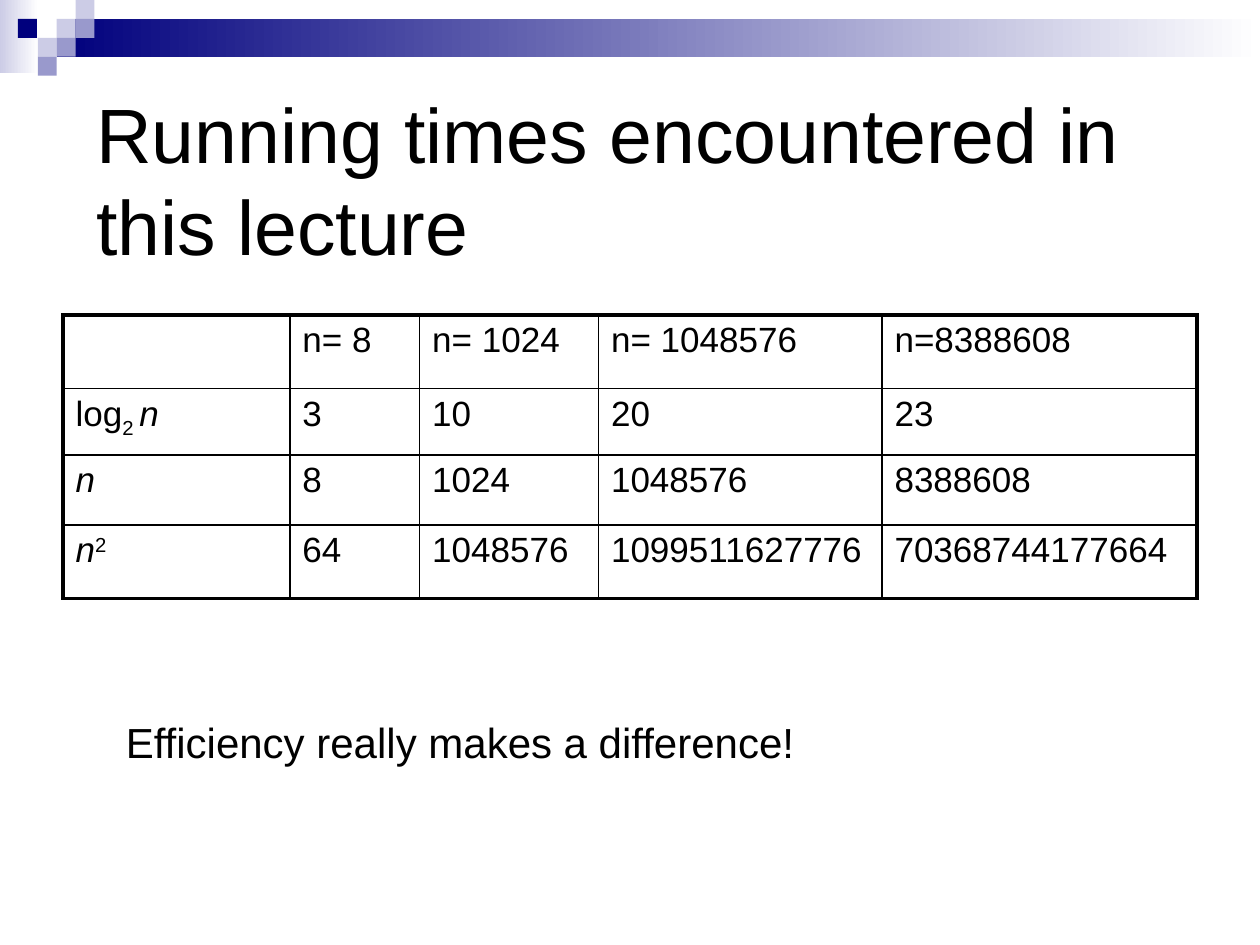
import pptx
import pptx.util
import pptx.dml.color
import pptx.enum.shapes
import pptx.enum.text
import pptx.oxml
import pptx.oxml.ns

Pt = pptx.util.Pt
COLORS = {
    "ink": "000000",
    "navy": "00007D",
    "periwinkle": "9999CC",
    "lavender": "CCCCE6",
    "paper": "FFFFFF",
}


def rgb(color):
    return pptx.dml.color.RGBColor.from_string(COLORS[color])


class SlideBuilder:
    font = "Arial"
    thin = 1
    thick = 2.25

    def __init__(self, slide):
        self.slide = slide

    def block(self, left, top, width, height, color, fade_to=None):
        block = self.slide.shapes.add_shape(
            pptx.enum.shapes.MSO_SHAPE.RECTANGLE,
            Pt(left), Pt(top), Pt(width), Pt(height))
        block.shadow.inherit = False
        block.line.fill.background()
        if fade_to:
            block.fill.gradient()
            block.fill.gradient_angle = 0
            for stop, shade in zip(block.fill.gradient_stops, (color, fade_to)):
                stop.color.rgb = rgb(shade)
        else:
            block.fill.solid()
            block.fill.fore_color.rgb = rgb(color)

    def run(self, paragraph, words, size, italic=False, baseline=0):
        run = paragraph.add_run()
        run.text = words
        run.font.name = self.font
        run.font.size = Pt(size)
        run.font.italic = italic
        run.font.color.rgb = rgb("ink")
        if baseline:
            run.font._element.set("baseline", str(baseline * 1000))

    def text(self, left, top, width, height, words, size, wrap=True, middle=False):
        anchors = pptx.enum.text.MSO_ANCHOR
        frame = self.slide.shapes.add_textbox(
            Pt(left), Pt(top), Pt(width), Pt(height)).text_frame
        frame.word_wrap = wrap
        frame.vertical_anchor = anchors.MIDDLE if middle else anchors.TOP
        if not wrap:
            frame.auto_size = pptx.enum.text.MSO_AUTO_SIZE.SHAPE_TO_FIT_TEXT
        self.run(frame.paragraphs[0], words, size)

    def border(self, cell, side, width):
        cell._tc.get_or_add_tcPr().append(pptx.oxml.parse_xml(
            f'<a:ln{side} {pptx.oxml.ns.nsdecls("a")} w="{Pt(width)}">'
            f'<a:solidFill><a:srgbClr val="{COLORS["ink"]}"/></a:solidFill>'
            f'</a:ln{side}>'))

    def table(self, left, top, widths, heights, rows, size):
        table = self.slide.shapes.add_table(
            len(heights), len(widths), Pt(left), Pt(top),
            Pt(sum(widths)), Pt(sum(heights))).table
        table.first_row = False
        table.horz_banding = False
        for column, width in zip(table.columns, widths):
            column.width = Pt(width)
        for row, height in zip(table.rows, heights):
            row.height = Pt(height)
        for r, entries in enumerate(rows):
            for c, entry in enumerate(entries):
                cell = table.cell(r, c)
                outer_edges = {
                    "L": c == 0,
                    "R": c == len(widths) - 1,
                    "T": r == 0,
                    "B": r == len(heights) - 1,
                }
                for side, is_outer in outer_edges.items():
                    self.border(cell, side, self.thick if is_outer else self.thin)
                cell.fill.background()
                parts = [(entry,)] if isinstance(entry, str) else entry
                for part in parts:
                    if part[0]:
                        self.run(cell.text_frame.paragraphs[0], part[0], size, *part[1:])


def main():
    deck = pptx.Presentation()
    deck.slide_width, deck.slide_height = Pt(720), Pt(540)
    builder = SlideBuilder(deck.slides.add_slide(deck.slide_layouts[6]))

    unit = 10.8
    builder.block(0, 0, 22, 42, "lavender", "paper")
    builder.block(3 * unit, unit, 720 - 3 * unit, 2 * unit, "navy", "paper")
    mosaic = [
        (3, 1, "lavender"),
        (4, 0, "lavender"),
        (4, 1, "periwinkle"),
        (2, 2, "lavender"),
        (0.95, 1, "navy"),
        (3, 2, "periwinkle"),
        (2, 3, "periwinkle"),
    ]
    for column, row, color in mosaic:
        builder.block(column * unit, row * unit, unit, unit, color)

    builder.text(48, 48, 648, 108, "Running times encountered in this lecture",
                 44, middle=True)

    log_n = [("log",), ("2 ", False, -25), ("n", True)]
    linear_n = [("n", True)]
    squared_n = [("n", True), ("2", False, 30)]
    running_times = [
        ["", "n= 8", "n= 1024", "n= 1048576", "n=8388608"],
        [log_n, "3", "10", "20", "23"],
        [linear_n, "8", "1024", "1048576", "8388608"],
        [squared_n, "64", "1048576", "1099511627776", "70368744177664"],
    ]
    builder.table(36, 180, [129.6, 74.2, 102.2, 162, 180], [42, 38, 40, 42],
                  running_times, 20)

    builder.text(64.8, 406, 397.4, 36, "Efficiency really makes a difference!",
                 24, wrap=False)
    deck.save("out.pptx")


if __name__ == "__main__":
    main()
